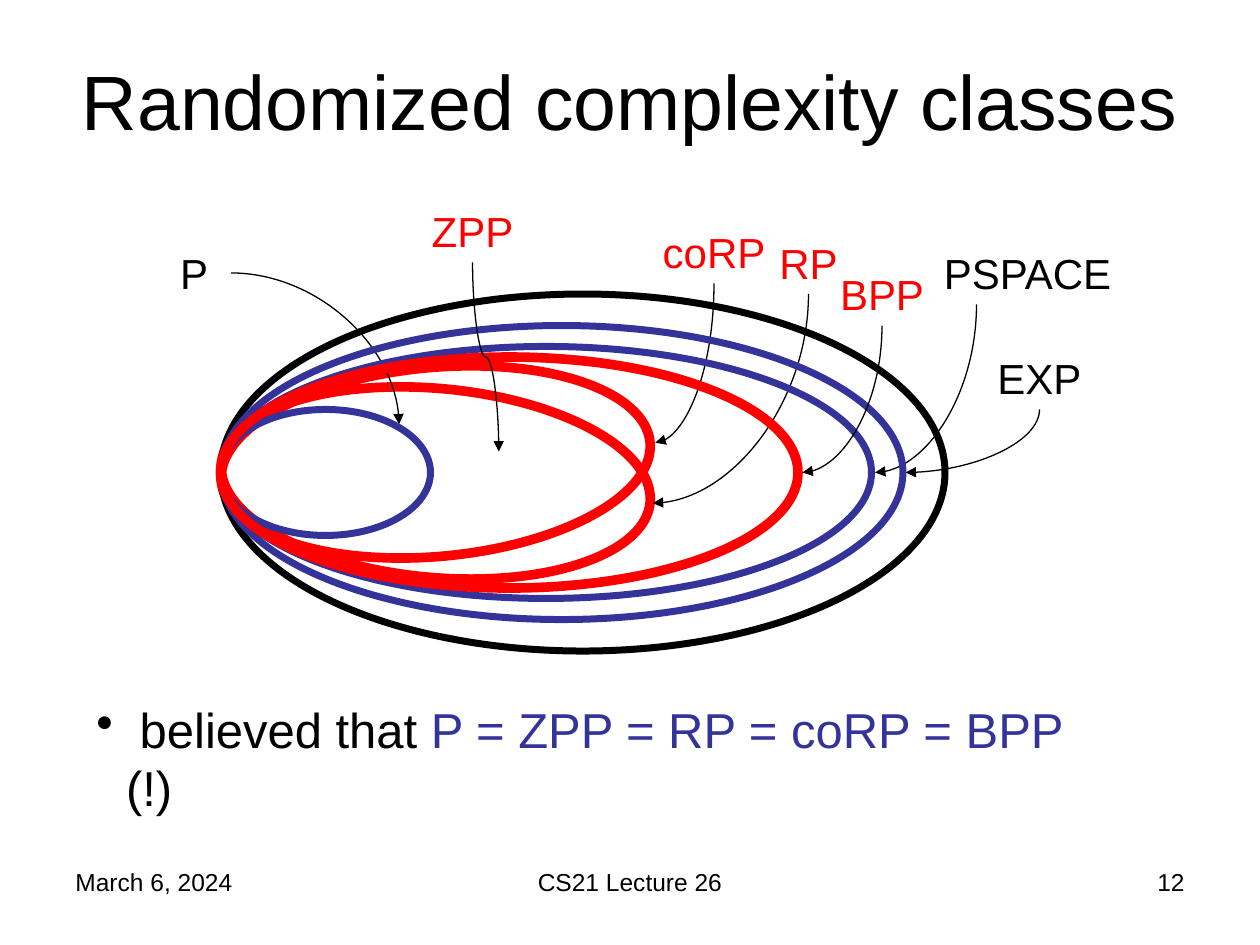
import pptx
import pptx.dml.color
import pptx.enum.shapes
import pptx.enum.text
import pptx.oxml
import pptx.oxml.ns
import pptx.util

Pt = pptx.util.Pt
qn = pptx.oxml.ns.qn
ALIGN = pptx.enum.text.PP_ALIGN
COLORS = {"black": "000000", "red": "FF0000", "blue": "333399"}

# width, height, vertical offset of the centre, rotation, colour, line width
SLANTED_CLASSES = [
    (246, 108, 6, 5.2, "red", 5.5),
    (246, 108, -6, -5.2, "red", 5.5),
]
NESTED_CLASSES = [
    (414, 204, 0, 0, "black", 4),
    (390, 168, 0, 0, "blue", 4),
    (372, 144, 0, 0, "blue", 4),
    (120, 72, 0, 0, "blue", 4),
    (330, 132, 0, 0, "red", 5.5),
]
# Lengths from here on are measured from the point where all classes touch.
LABELS = [
    ("PSPACE", 348, -132, 168, "black", ALIGN.RIGHT),
    ("P", -36, -132, 42, "black", ALIGN.CENTER),
    ("EXP", 432, -72, 72, "black", ALIGN.CENTER),
    ("coRP", 198, -144, 168, "red", ALIGN.CENTER),
    ("RP", 252, -138, 168, "red", ALIGN.CENTER),
    ("BPP", 294, -120, 168, "red", ALIGN.CENTER),
    ("ZPP", 60, -156, 168, "red", ALIGN.CENTER),
]
# start, end, course of the curve
ARROWS_BEHIND = [
    ((432, -96), (374, 0), "down-left"),
    ((336, -102), (247, 17.5), "down-left"),
    ((6, -114), (102, -27.5), "right-down"),
    ((468, -36), (391.5, 0), "down-left"),
    ((282, -108), (248.5, -17), "down-left"),
]
ARROWS_IN_FRONT = [
    ((378, -84), (332.5, 0), "down-left"),
    ((144, -120), (159, -12), "down-right-down"),
]
# preset, rotation in degrees, mirrored
COURSES = {
    "right-down": ("curvedConnector2", 0, False),
    "down-left": ("curvedConnector2", 90, False),
    "down-right-down": ("curvedConnector3", 270, True),
}


def rgb(name):
    return pptx.dml.color.RGBColor.from_string(COLORS[name])


def add_text(slide, box, runs, size, align=ALIGN.LEFT):
    """Add a text box of one paragraph; runs are (text, colour) pairs."""
    shape = slide.shapes.add_textbox(*map(Pt, box))
    shape.text_frame.word_wrap = True
    paragraph = shape.text_frame.paragraphs[0]
    paragraph.alignment = align
    for text, color in runs:
        run = paragraph.add_run()
        run.text = text
        run.font.name = "Arial"
        run.font.size = Pt(size)
        run.font.color.rgb = rgb(color)
    return shape


def add_half_line_before(paragraph):
    properties = paragraph._p.get_or_add_pPr()
    spacing = pptx.oxml.parse_xml(
        f'<a:spcBef {pptx.oxml.ns.nsdecls("a")}><a:spcPct val="50000"/></a:spcBef>')
    properties.insert(0, spacing)


def add_class_ellipse(slide, left, middle, ellipse):
    width, height, offset, rotation, color, weight = ellipse
    shape = slide.shapes.add_shape(
        pptx.enum.shapes.MSO_SHAPE.OVAL,
        Pt(left), Pt(middle + offset - height / 2), Pt(width), Pt(height))
    shape.rotation = rotation
    shape.shadow.inherit = False
    shape.fill.background()
    shape.line.color.rgb = rgb(color)
    shape.line.width = Pt(weight)


def add_curved_arrow(slide, left, middle, arrow):
    (start_x, start_y), (end_x, end_y), course = arrow
    preset, rotation, mirrored = COURSES[course]
    width, height = abs(end_x - start_x), abs(end_y - start_y)
    if rotation:  # the frame is stored as it lies before its quarter turn
        width, height = height, width
    x = left + (start_x + end_x - width) / 2
    y = middle + (start_y + end_y - height) / 2
    begin, end = (x + width, x) if mirrored else (x, x + width)
    connector = slide.shapes.add_connector(
        pptx.enum.shapes.MSO_CONNECTOR.CURVE,
        Pt(begin), Pt(y), Pt(end), Pt(y + height))
    connector.line.color.rgb = rgb("black")
    connector.line.width = Pt(0.75)
    properties = connector._element.spPr
    properties.find(qn("a:xfrm")).set("rot", str(rotation * 60000))
    properties.find(qn("a:prstGeom")).set("prst", preset)
    line = properties.find(qn("a:ln"))
    line.append(line.makeelement(qn("a:tailEnd"), {"type": "triangle"}))
    properties.append(properties.makeelement(qn("a:effectLst"), {}))


def add_class_diagram(slide, left, top, height):
    middle = top + height / 2
    for ellipse in SLANTED_CLASSES:
        add_class_ellipse(slide, left, middle, ellipse)
    for arrow in ARROWS_BEHIND:
        add_curved_arrow(slide, left, middle, arrow)
    for ellipse in NESTED_CLASSES:
        add_class_ellipse(slide, left, middle, ellipse)
    for arrow in ARROWS_IN_FRONT:
        add_curved_arrow(slide, left, middle, arrow)
    for text, x, y, width, color, align in LABELS:
        box = (left + x, middle + y, width, 36)
        label = add_text(slide, box, [(text, color)], 24, align)
        add_half_line_before(label.text_frame.paragraphs[0])


def add_title(slide, box):
    title = add_text(slide, box, [("Randomized complexity classes", "black")],
                     44, ALIGN.CENTER)
    title.text_frame.vertical_anchor = pptx.enum.text.MSO_ANCHOR.MIDDLE


def add_belief(slide, box):
    runs = [(" believed that ", "black"),
            ("P = ZPP = RP = coRP = BPP", "blue"),
            (" (!)", "black")]
    shape = add_text(slide, box, runs, 28)
    shape.text_frame.margin_right = Pt(24)
    paragraph = shape.text_frame.paragraphs[0]
    add_half_line_before(paragraph)
    properties = paragraph._p.get_or_add_pPr()
    properties.set("marL", str(Pt(17)))
    properties.set("indent", str(-Pt(17)))
    properties.append(properties.makeelement(qn("a:buChar"), {"char": "•"}))


def add_footer(slide, left, top, width, height):
    side, center = 168, 228
    parts = [("March 6, 2024", 0, side, ALIGN.LEFT),
             ("CS21 Lecture 26", (width - center) / 2, center, ALIGN.CENTER),
             ("12", width - side, side, ALIGN.RIGHT)]
    for text, x, part_width, align in parts:
        add_text(slide, (left + x, top, part_width, height),
                 [(text, "black")], 14, align)


def main():
    presentation = pptx.Presentation()
    presentation.slide_width = Pt(720)
    presentation.slide_height = Pt(540)
    slide = presentation.slides.add_slide(presentation.slide_layouts[6])
    add_footer(slide, 36, 492, 648, 37.5)
    add_title(slide, (36, 12, 648, 90))
    add_class_diagram(slide, 126, 168, 204)
    add_belief(slide, (48, 396, 606, 41))
    presentation.save("out.pptx")


if __name__ == "__main__":
    main()
